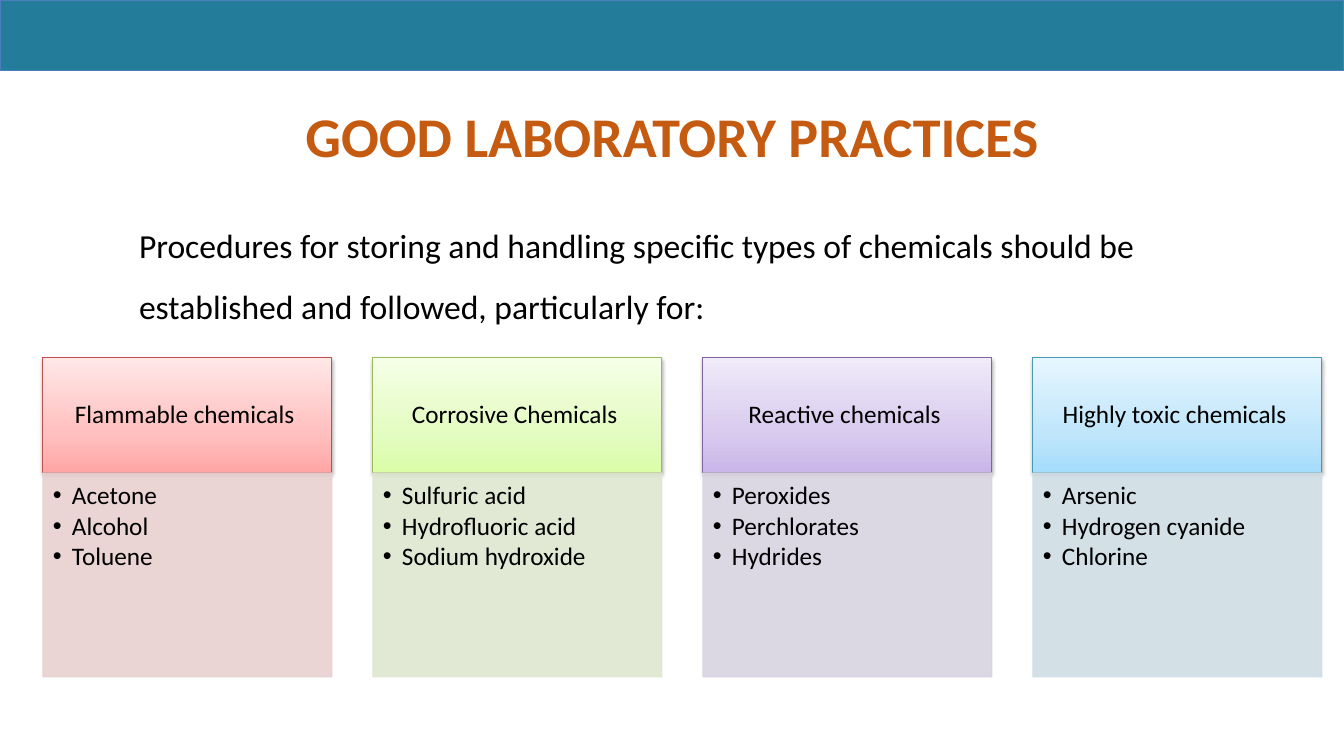
from lxml.etree import SubElement
from pptx import Presentation
from pptx.dml.color import RGBColor
from pptx.enum.shapes import MSO_SHAPE
from pptx.enum.text import MSO_ANCHOR, PP_ALIGN
from pptx.oxml.ns import qn
from pptx.util import Pt

# Content
TITLE = "GOOD LABORATORY PRACTICES"
INTRO = ("Procedures for storing and handling specific types of chemicals "
         "should be established and followed, particularly for:")
GROUPS = [
    ("red", "Flammable chemicals ", ["Acetone", "Alcohol", "Toluene"]),
    ("green", "Corrosive Chemicals ",
     ["Sulfuric acid", "Hydrofluoric acid", "Sodium hydroxide"]),
    ("purple", "Reactive chemicals ", ["Peroxides", "Perchlorates", "Hydrides"]),
    ("blue", "Highly toxic chemicals ", ["Arsenic", "Hydrogen cyanide", "Chlorine"]),
]

# Style
FONT = "Calibri"
COLORS = {"bar": "237C9A", "bar_line": "4B7EBC", "title": "C55A11", "text": "000000",
          "red_line": "C0504D", "red_body": "E8D0D0",
          "green_line": "9BBB59", "green_body": "DEE7D1",
          "purple_line": "8064A2", "purple_body": "D8D3E0",
          "blue_line": "4799B5", "blue_body": "CFDEE5"}
GRADIENTS = {"red": ("FFA6A5", "FFC0BF", "FFE7E7"),
             "green": ("DAFDA7", "E4FCC2", "F5FFE7"),
             "purple": ("C9B5E8", "D8CBEE", "F0EAF9"),
             "blue": ("A4DDFB", "C0E6FB", "E6F6FF")}
STOPS = (0, 35000, 100000)

# Layout in px
SLIDE_W, SLIDE_H = 1344, 756
COL_X, COL_STEP, COL_W = 43, 330, 289
HEAD_Y, HEAD_H, BODY_H = 358, 115, 204


def px(n):
    return round(n * 914400 / 100.8)


def rgb(name):
    return RGBColor.from_string(COLORS[name])


def add_rect(x, y, w, h, fill, line):
    sp = s.shapes.add_shape(MSO_SHAPE.RECTANGLE, px(x), px(y), px(w), px(h))
    sp.shadow.inherit = False
    sp.fill.solid()
    sp.fill.fore_color.rgb = rgb(fill)
    sp.line.color.rgb = rgb(line)
    sp.line.width = Pt(0.75)
    return sp


def set_frame(sp, insets, anchor=MSO_ANCHOR.TOP):
    tf = sp.text_frame
    tf.word_wrap = True
    tf.vertical_anchor = anchor
    tf.margin_left, tf.margin_top, tf.margin_right, tf.margin_bottom = map(px, insets)
    return tf


def add_run(p, text, size, color="text", bold=False, align=PP_ALIGN.LEFT, spacing=1.0):
    p.alignment = align
    p.line_spacing = spacing
    r = p.add_run()
    r.text = text
    r.font.name, r.font.size, r.font.bold = FONT, Pt(size), bold
    r.font.color.rgb = rgb(color)


def add_textbox(x, y, w, h, insets):
    return set_frame(s.shapes.add_textbox(px(x), px(y), px(w), px(h)), insets)


def set_indent(p, left, first=0):
    pPr = p._p.get_or_add_pPr()
    pPr.set("marL", str(px(left)))
    pPr.set("indent", str(px(first)))
    return pPr


def set_gradient(sp, colors):
    sp.fill.gradient()
    sp.fill.gradient_angle = 90
    stops = sp._element.spPr.find(qn("a:gradFill")).find(qn("a:gsLst"))
    for old in list(stops):
        stops.remove(old)
    for pos, color in zip(STOPS, colors):
        stop = SubElement(stops, qn("a:gs"), pos=str(pos))
        SubElement(stop, qn("a:srgbClr"), val=color)


def add_shadow(sp):
    effects = sp._element.spPr.find(qn("a:effectLst"))
    shadow = SubElement(effects, qn("a:outerShdw"), blurRad=str(Pt(3.1)),
                        dist=str(Pt(1.6)), dir="5400000", rotWithShape="0")
    color = SubElement(shadow, qn("a:srgbClr"), val="000000")
    SubElement(color, qn("a:alpha"), val="38000")


prs = Presentation()
prs.slide_width, prs.slide_height = px(SLIDE_W), px(SLIDE_H)
s = prs.slides.add_slide(prs.slide_layouts[6])

# Top bar, introduction and title
add_rect(0, 0, SLIDE_W, 71, "bar", "bar_line")
p = add_textbox(79, 200, 1186, 380, (10, 5, 10, 0)).paragraphs[0]
set_indent(p, 50)
add_run(p, INTRO, 24, spacing=1.5)
p = add_textbox(97, 97, 1150, 78, (10, 5, 10, 5)).paragraphs[0]
add_run(p, TITLE, 40, "title", True, PP_ALIGN.CENTER)

# One column per chemical group
for i, (hue, heading, chemicals) in enumerate(GROUPS):
    x = COL_X + i * COL_STEP

    # Heading
    head = add_rect(x, HEAD_Y, COL_W, HEAD_H, f"{hue}_body", f"{hue}_line")
    set_gradient(head, GRADIENTS[hue])
    add_shadow(head)
    tf = set_frame(head, (14, 8, 14, 8), MSO_ANCHOR.MIDDLE)
    add_run(tf.paragraphs[0], heading, 18, align=PP_ALIGN.CENTER, spacing=0.9)

    # Bulleted list
    body = add_rect(x, HEAD_Y + HEAD_H, COL_W, BODY_H, f"{hue}_body", f"{hue}_body")
    for color in body._element.spPr.iter(qn("a:srgbClr")):
        SubElement(color, qn("a:alpha"), val="90000")
    tf = set_frame(body, (10, 10, 14, 16))
    for j, chemical in enumerate(chemicals):
        p = tf.add_paragraph() if j else tf.paragraphs[0]
        pPr = set_indent(p, 19, -19)
        SubElement(pPr, qn("a:buFont"), typeface="Arial")
        SubElement(pPr, qn("a:buChar"), char="•")
        p.space_after = Pt(2.4)
        add_run(p, chemical, 18, spacing=0.9)

prs.save("out.pptx")
